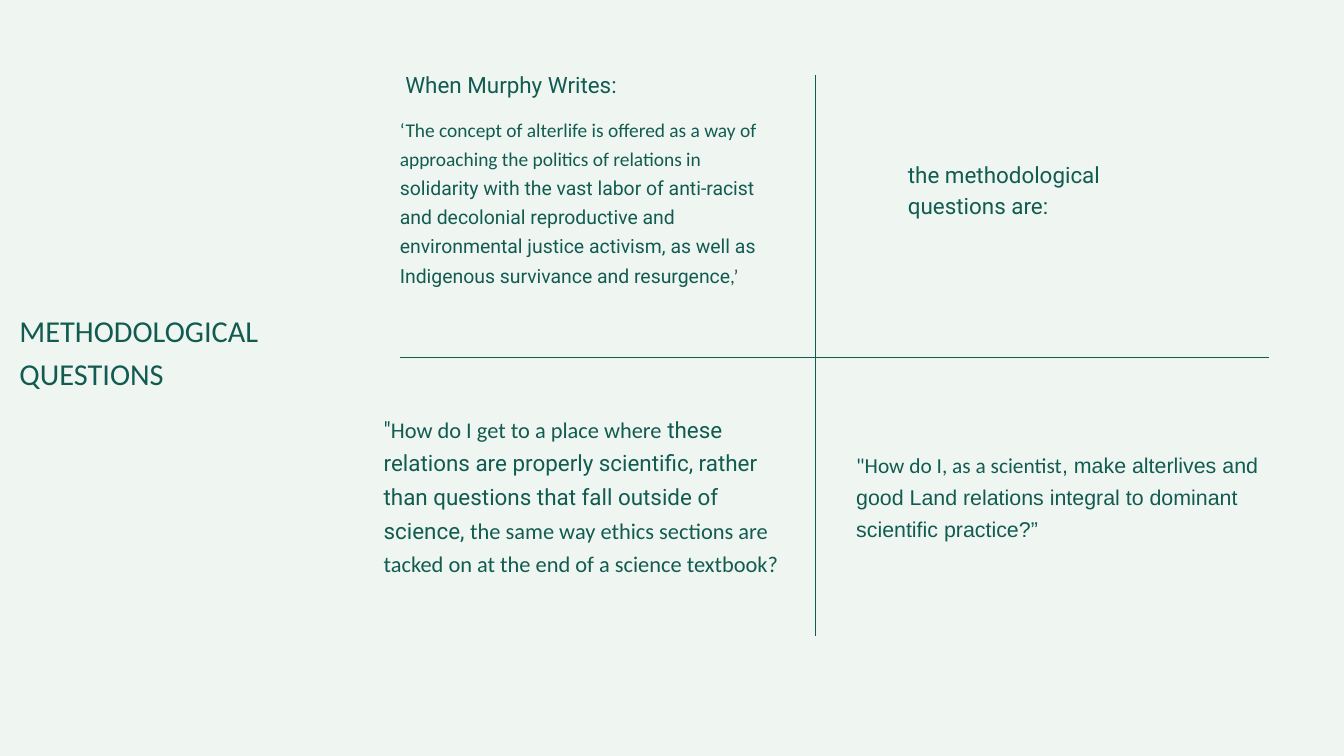
"""Build the methodological questions slide."""
from lxml import etree
from pptx import Presentation
from pptx.dml import color
from pptx.enum import shapes, text
from pptx.oxml import ns
from pptx.util import Inches, Pt

GREEN = "125B50"
BACKGROUND = "EFF6F2"


def rgb(value):
    """Turn a hex string into a colour."""
    return color.RGBColor.from_string(value)


def add_text(s, box, size, spacing, *paragraphs):
    """Add a text box; each paragraph is a list of (font, text) runs."""
    sp = s.shapes.add_textbox(*map(Inches, box))
    tf = sp.text_frame
    tf.word_wrap = True
    tf.auto_size = text.MSO_AUTO_SIZE.NONE
    tf.margin_left = tf.margin_top = tf.margin_right = tf.margin_bottom = 0
    for i, runs in enumerate(paragraphs):
        p = tf.add_paragraph() if i else tf.paragraphs[0]
        p.line_spacing = Pt(spacing)
        for font, words in runs:
            r = p.add_run()
            r.text = words
            r.font.name = font
            r.font.size = Pt(size)
            r.font.color.rgb = rgb(GREEN)


def add_rule(s, x1, y1, x2, y2):
    """Add a thin straight divider."""
    line = s.shapes.add_connector(
        shapes.MSO_CONNECTOR.STRAIGHT, *map(Inches, (x1, y1, x2, y2)))
    line.line.color.rgb = rgb(GREEN)
    line.line.width = Pt(0.75)
    etree.SubElement(line._element.spPr, ns.qn("a:effectLst"))


def main():
    """Lay out the title, the four quadrants and the dividers."""
    prs = Presentation()
    prs.slide_width, prs.slide_height = Inches(20), Inches(11.25)
    s = prs.slides.add_slide(prs.slide_layouts[6])
    s.background.fill.solid()
    s.background.fill.fore_color.rgb = rgb(BACKGROUND)

    add_text(s, (5.95, 0.99, 4.97, 0.53), 24, 33.6,
             [("Roboto", " When Murphy Writes:")])
    add_text(s, (5.95, 1.67, 5.71, 3.89), 20.8, 31.2, [
        ("Calibri", "‘The concept of alterlife is offered as a way of "
                    "approaching the politics of relations in "),
        ("Roboto", "solidarity with the vast labor of anti-racist and "
                   "decolonial reproductive and environmental justice "
                   "activism, as well as Indigenous survivance and "
                   "resurgence"),
        ("Calibri", ",’")])
    add_text(s, (13.51, 2.33, 3.88, 0.99), 24, 33.6,
             [("Roboto", "the methodological questions are:")])
    add_text(s, (12.74, 6.63, 6.42, 2.39), 22.9, 34.4, [
        ("Calibri", '"How do I, as a scientist'),
        ("Arial", ", make alterlives and good Land relations integral to "
                  "dominant scientific practice?”")])
    add_text(s, (0.29, 4.56, 5.14, 1.33), 32.5, 45.5,
             [("Calibri", "METHODOLOGICAL")], [("Calibri", "QUESTIONS")])
    add_text(s, (5.71, 6.09, 6.13, 4.57), 24, 36, [
        ("Roboto", '"'),
        ("Calibri", "How do I get to a place where"),
        ("Roboto", " these relations are properly scientific, rather than "
                   "questions that fall outside of science, "),
        ("Calibri", "the same way ethics sections are tacked on at the end "
                    "of a science textbook?")])

    add_rule(s, 5.95, 5.32, 18.88, 5.32)
    add_rule(s, 12.13, 1.12, 12.13, 9.46)
    prs.save("out.pptx")


if __name__ == "__main__":
    main()
